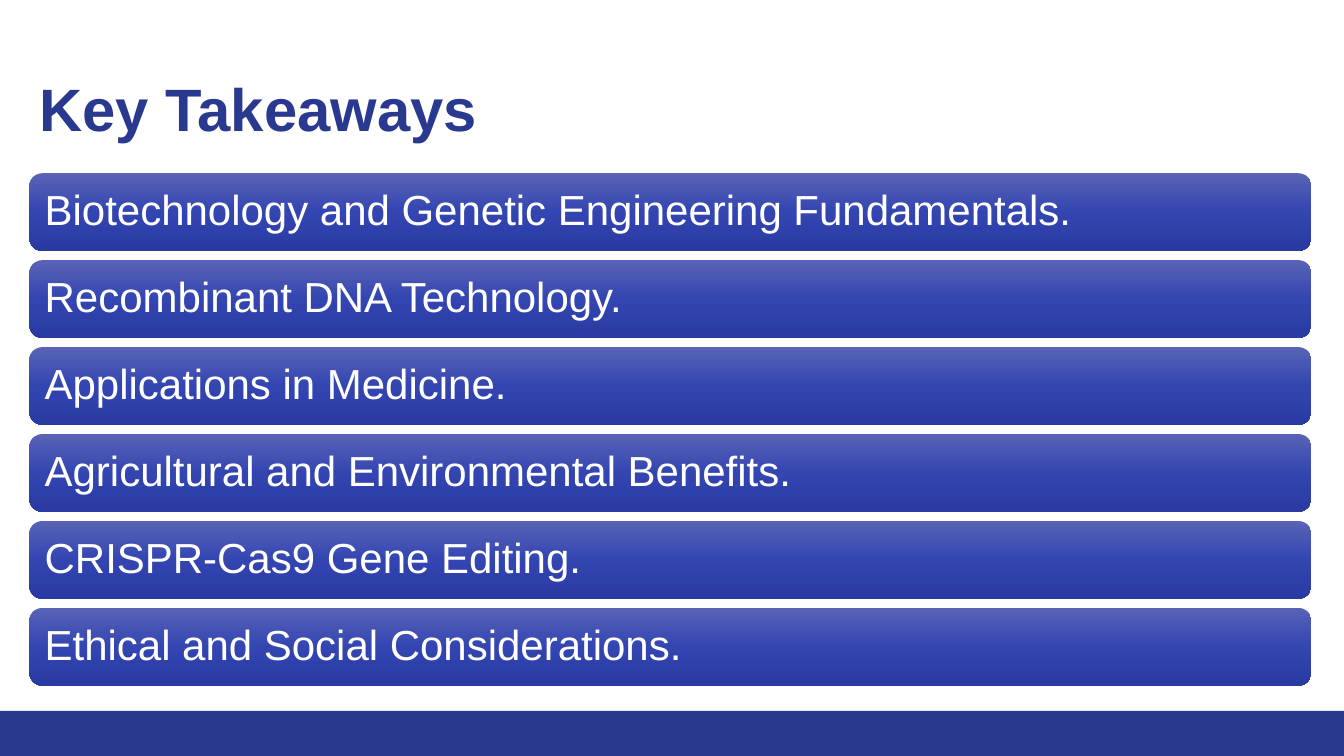
from dataclasses import dataclass

from lxml import etree
from pptx import Presentation
from pptx.dml.color import RGBColor
from pptx.enum import shapes, text
from pptx.oxml import ns
from pptx.util import Pt

PX = 9525  # EMU in one px, at 96 px to the inch
SLIDE_W, SLIDE_H = 1280, 720


@dataclass(frozen=True)
class Theme:
    font: str = "Arial"
    navy: str = "2A3990"
    bar_text: str = "FFFFFF"
    bar_stops: tuple = ((0, "5963B6"), (50, "3345B1"), (100, "293AA2"))
    title_size: float = 42.7
    bar_size: float = 30


THEME = Theme()

TAKEAWAYS = (
    "Biotechnology and Genetic Engineering Fundamentals.",
    "Recombinant DNA Technology.",
    "Applications in Medicine.",
    "Agricultural and Environmental Benefits.",
    "CRISPR-Cas9 Gene Editing.",
    "Ethical and Social Considerations.",
)


def emu(*lengths):
    return [round(length * PX) for length in lengths]


def add_block(slide, kind, box):
    block = slide.shapes.add_shape(kind, *emu(*box))
    block.shadow.inherit = False
    block.line.fill.background()
    return block


def fill_downward(shape, stops):
    """Fill the shape with a gradient that runs from top to bottom."""
    shape.fill.gradient()
    shape.fill.gradient_angle = 270
    stop_list = shape._element.spPr.find(".//" + ns.qn("a:gsLst"))
    for stop in list(stop_list):
        stop_list.remove(stop)
    for percent, color in stops:
        stop = etree.SubElement(stop_list, ns.qn("a:gs"), pos=str(percent * 1000))
        etree.SubElement(stop, ns.qn("a:srgbClr"), val=color)


def set_text(shape, words, size, color, bold=False):
    frame = shape.text_frame
    frame.text = words
    frame.word_wrap = True
    frame.auto_size = text.MSO_AUTO_SIZE.NONE
    frame.vertical_anchor = text.MSO_ANCHOR.MIDDLE
    line = frame.paragraphs[0]
    line.alignment = text.PP_ALIGN.LEFT
    line.line_spacing = 0.9
    line.font.name = THEME.font
    line.font.size = Pt(size)
    line.font.bold = bold
    line.font.color.rgb = RGBColor.from_string(color)
    return frame


def place_title(slide, words, box):
    title = slide.shapes.title
    title.left, title.top, title.width, title.height = emu(*box)
    set_text(title, words, THEME.title_size, THEME.navy, bold=True)


def add_footer_band(slide, box):
    band = add_block(slide, shapes.MSO_SHAPE.RECTANGLE, box)
    band.fill.solid()
    band.fill.fore_color.rgb = RGBColor.from_string(THEME.navy)


def add_takeaway_bars(slide, takeaways, box, bar_height=74, inset=11):
    """Spread one bar per takeaway evenly over the height of the box."""
    left, top, width, height = box
    pitch = (height - bar_height) / (len(takeaways) - 1)
    for row, takeaway in enumerate(takeaways):
        bar = add_block(slide, shapes.MSO_SHAPE.ROUNDED_RECTANGLE,
                        (left, top + row * pitch, width, bar_height))
        fill_downward(bar, THEME.bar_stops)
        frame = set_text(bar, takeaway, THEME.bar_size, THEME.bar_text)
        frame.margin_left = frame.margin_right = inset * PX
        frame.margin_top = frame.margin_bottom = inset * PX


def main():
    deck = Presentation()
    deck.slide_width, deck.slide_height = emu(SLIDE_W, SLIDE_H)
    title_only = deck.slide_layouts.get_by_name("Title Only")
    slide = deck.slides.add_slide(title_only)
    add_footer_band(slide, (0, 677, SLIDE_W, SLIDE_H - 677))
    place_title(slide, "Key Takeaways", (28, 38, 1218, 138))
    add_takeaway_bars(slide, TAKEAWAYS, (28, 165, 1221, 488))
    deck.save("out.pptx")


if __name__ == "__main__":
    main()
